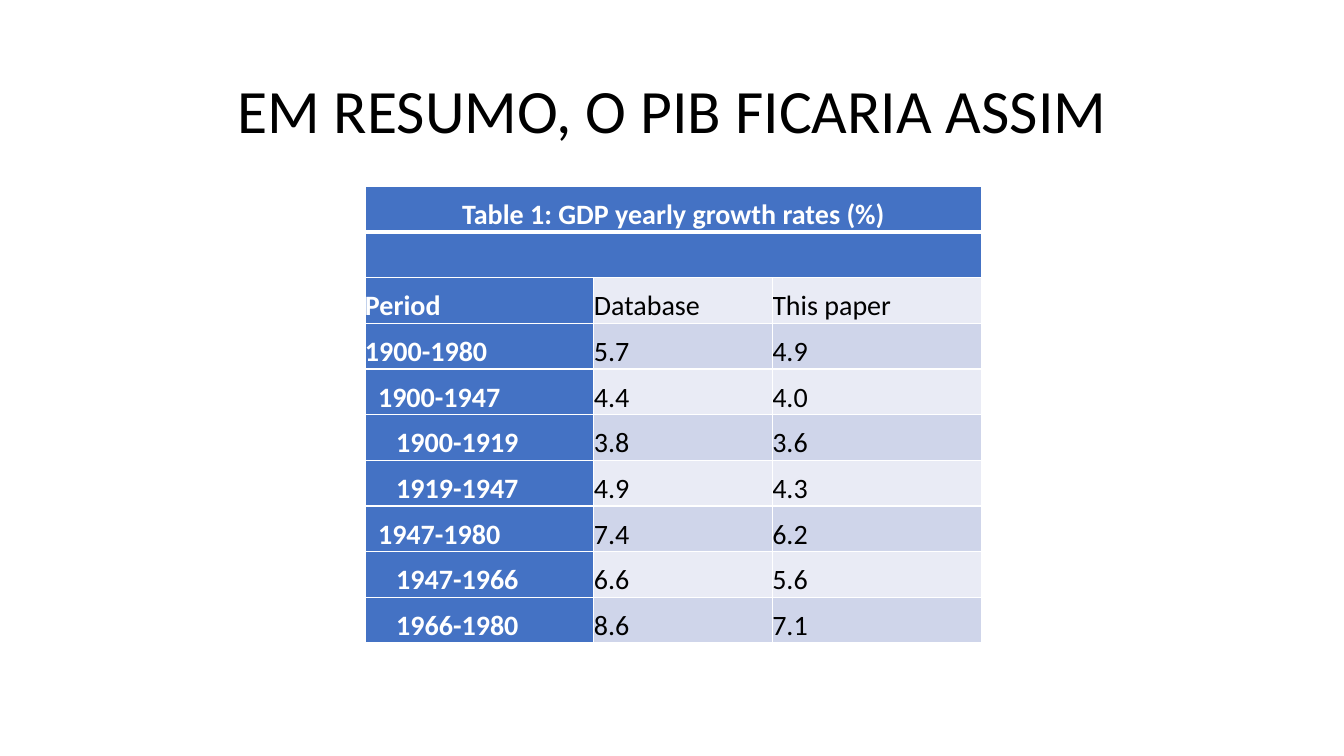
from dataclasses import dataclass

from lxml.etree import SubElement
from pptx import Presentation
from pptx.dml.color import RGBColor
from pptx.enum.text import MSO_ANCHOR, PP_ALIGN
from pptx.oxml.ns import qn
from pptx.util import Pt

PX = 9144  # 100 px to the inch


@dataclass(frozen=True)
class Theme:
    font: str = "Calibri"
    title: int = 44
    body: int = 20
    ink: str = "000000"
    white: str = "FFFFFF"
    head: str = "4472C4"
    bands: tuple = ("E9EBF5", "CFD5EA")
    line: int = 1
    rule: int = 3


THEME = Theme()
CAPTION = "Table 1: GDP yearly growth rates (%)"
COLS = (227, 177, 208)
INDENTS = (0, 13, 31)
# Nesting level, period and the two growth rates
ROWS = (
    (0, "Period", "Database", "This paper"),
    (0, "1900-1980", "5.7", "4.9"),
    (1, "1900-1947", "4.4", "4.0"),
    (2, "1900-1919", "3.8", "3.6"),
    (2, "1919-1947", "4.9", "4.3"),
    (1, "1947-1980", "7.4", "6.2"),
    (2, "1947-1966", "6.6", "5.6"),
    (2, "1966-1980", "8.6", "7.1"),
)


def style(para, size, color, bold=False):
    font = para.font
    font.name, font.size, font.bold = THEME.font, Pt(size), bold
    font.color.rgb = RGBColor.from_string(color)


def edge(cell, top=THEME.line, bottom=THEME.line):
    props = cell._tc.get_or_add_tcPr()
    sides = {"L": THEME.line, "R": THEME.line, "T": top, "B": bottom}
    for side, width in sides.items():
        line = SubElement(props, qn(f"a:ln{side}"), w=str(Pt(width)))
        fill = SubElement(line, qn("a:solidFill"))
        SubElement(fill, qn("a:srgbClr"), val=THEME.white)


def paint(cell, text, fill, color, bold=False, indent=0, align=PP_ALIGN.LEFT):
    cell.fill.solid()
    cell.fill.fore_color.rgb = RGBColor.from_string(fill)
    cell.margin_left = indent * PX
    cell.margin_right = cell.margin_top = cell.margin_bottom = 0
    cell.vertical_anchor = MSO_ANCHOR.BOTTOM
    para = cell.text_frame.paragraphs[0]
    para.text = text
    para.alignment = align
    para.line_spacing, para.space_after = 1.07, Pt(8)
    style(para, THEME.body, color, bold)


def add_title(slide, text, left, top, width, height):
    title = slide.shapes.title
    title.left, title.top = left * PX, top * PX
    title.width, title.height = width * PX, height * PX
    frame = title.text_frame
    frame.text = text
    frame.vertical_anchor = MSO_ANCHOR.MIDDLE
    para = frame.paragraphs[0]
    para.alignment, para.line_spacing = PP_ALIGN.CENTER, 0.9
    style(para, THEME.title, THEME.ink)


def add_rates(slide, left, top, width, height):
    count = len(ROWS) + 2
    table = slide.shapes.add_table(
        count, len(COLS), left * PX, top * PX, width * PX, height * PX).table
    for col, part in zip(table.columns, COLS):
        col.width = width * part * PX // sum(COLS)
    for row in table.rows:
        row.height = height * PX // count

    # Caption and empty band, each across all columns
    for at, text in enumerate((CAPTION, "")):
        for cell in table.rows[at].cells:
            edge(cell, *((THEME.rule, THEME.line) if at
                         else (THEME.line, THEME.rule)))
            paint(cell, "", THEME.head, THEME.white)
        first = table.cell(at, 0)
        first.merge(table.cell(at, len(COLS) - 1))
        paint(first, text, THEME.head, THEME.white, True,
              align=PP_ALIGN.CENTER)

    # Periods with their rates in alternating bands
    for at, (level, *texts) in enumerate(ROWS):
        for col, text in enumerate(texts):
            cell = table.cell(at + 2, col)
            edge(cell)
            if col == 0:
                paint(cell, text, THEME.head, THEME.white, True,
                      INDENTS[level])
            else:
                paint(cell, text, THEME.bands[at % 2], THEME.ink)


def main():
    deck = Presentation()
    deck.slide_width, deck.slide_height = 1333 * PX, 750 * PX
    slide = deck.slides.add_slide(deck.slide_layouts[5])
    add_title(slide, "EM RESUMO, O PIB FICARIA ASSIM", 92, 40, 1150, 145)
    add_rates(slide, 362, 185, 612, 453)
    deck.save("out.pptx")


if __name__ == "__main__":
    main()
